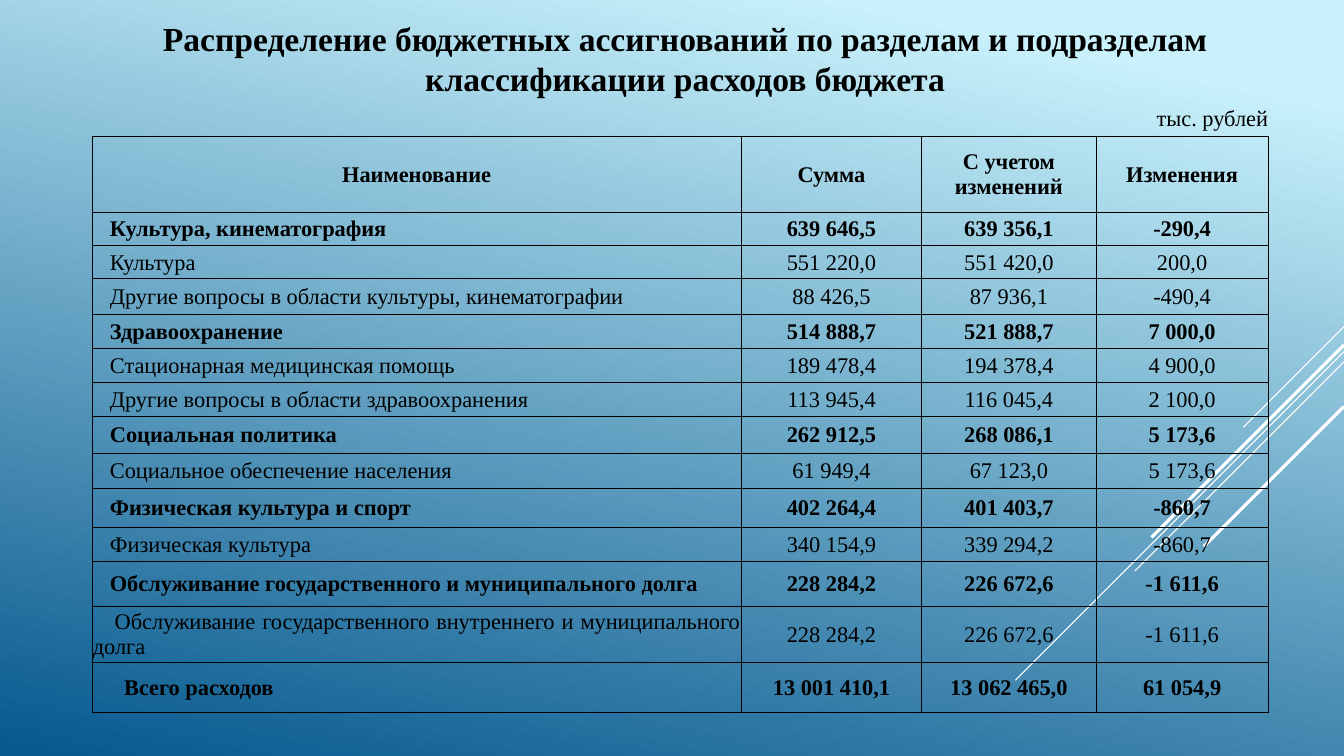
from dataclasses import dataclass

from lxml.etree import SubElement
from pptx import Presentation
from pptx.dml.color import RGBColor as Rgb
from pptx.enum.shapes import MSO_CONNECTOR as Link
from pptx.enum.text import MSO_ANCHOR as Anchor, MSO_AUTO_SIZE as Auto, PP_ALIGN as Align
from pptx.oxml.ns import qn
from pptx.util import Cm, Pt


@dataclass(frozen=True)
class Theme:
    font: str = "Times New Roman"
    ink: str = "000000"
    ray: str = "FFFFFF"
    light: str = "C8F1FB"
    deep: str = "06588E"
    head: int = 24
    body: int = 16
    rule: float = 0.5


THEME = Theme()
WIDE, HIGH = 33.87, 19.05

# Top and drop of each diagonal ray, then its weight
RAYS = [(8.23, 2.54, 0.75), (8.86, 8.28, 0.75), (9.12, 5.27, 0.75),
        (8.69, 4.85, 2.25), (10.24, 3.53, 2.25)]

COLS = [16.36, 4.55, 4.39, 4.34]
HEADS = ["Наименование", "Сумма", "С учетом изменений", "Изменения"]
HEAD_ROW = 1.91

# Height, bold, first-line indent, cells
ROWS = [
    (0.84, True, 0.43, ["Культура, кинематография", "639 646,5", "639 356,1", "-290,4"]),
    (0.83, False, 0.43, ["Культура", "551 220,0", "551 420,0", "200,0"]),
    (0.9, False, 0.43, ["Другие вопросы в области культуры, кинематографии",
                        "88 426,5", "87 936,1", "-490,4"]),
    (0.86, True, 0.43, ["Здравоохранение", "514 888,7", "521 888,7", "7 000,0"]),
    (0.85, False, 0.43, ["Стационарная медицинская помощь",
                         "189 478,4", "194 378,4", "4 900,0"]),
    (0.86, False, 0.43, ["Другие вопросы в области здравоохранения",
                         "113 945,4", "116 045,4", "2 100,0"]),
    (0.93, True, 0.43, ["Социальная политика", "262 912,5", "268 086,1", "5 173,6"]),
    (0.88, False, 0.43, ["Социальное обеспечение населения",
                         "61 949,4", "67 123,0", "5 173,6"]),
    (0.98, True, 0.43, ["Физическая культура и спорт",
                        "402 264,4", "401 403,7", "-860,7"]),
    (0.86, False, 0.43, ["Физическая культура", "340 154,9", "339 294,2", "-860,7"]),
    (1.14, True, 0.43, ["Обслуживание государственного и муниципального долга",
                        "228 284,2", "226 672,6", "-1 611,6"]),
    (1.4, False, 0.55, ["Обслуживание государственного внутреннего и муниципального долга",
                        "228 284,2", "226 672,6", "-1 611,6"]),
    (1.27, True, 0.79, ["Всего расходов", "13 001 410,1", "13 062 465,0", "61 054,9"]),
]


def write(frame, text, size, bold=False, align=Align.LEFT):
    frame.word_wrap = True
    frame.text = text
    para = frame.paragraphs[0]
    para.alignment = align
    font = para.font
    font.name, font.size, font.bold = THEME.font, Pt(size), bold
    font.color.rgb = Rgb.from_string(THEME.ink)
    return para


def paint(slide):
    fill = slide.background.fill
    fill.gradient()
    fill.gradient_angle = 258
    stops = zip(fill.gradient_stops, (0.1, 1), (THEME.light, THEME.deep))
    for stop, place, color in stops:
        stop.position = place
        stop.color.rgb = Rgb.from_string(color)


def add_rays(slide, right):
    for top, drop, weight in RAYS:
        ray = slide.shapes.add_connector(
            Link.STRAIGHT, Cm(right), Cm(top), Cm(right - drop), Cm(top + drop))
        ray.line.color.rgb = Rgb.from_string(THEME.ray)
        ray.line.width = Pt(weight)
        SubElement(ray._element.spPr, qn("a:effectLst"))


def add_head(slide, left, top, width, height):
    title = slide.shapes.title
    title.left, title.top = Cm(left), Cm(top)
    title.width, title.height = Cm(width), Cm(height)
    write(title.text_frame, "Распределение бюджетных ассигнований по разделам "
          "и подразделам классификации расходов бюджета",
          THEME.head, True, Align.CENTER)
    title.text_frame.auto_size = Auto.NONE
    title.text_frame.vertical_anchor = Anchor.MIDDLE


def add_unit(slide, left, top, width, height):
    box = slide.shapes.add_textbox(Cm(left), Cm(top), Cm(width), Cm(height))
    write(box.text_frame, "тыс. рублей", THEME.body)


def style(cell):
    cell.vertical_anchor = Anchor.MIDDLE
    cell.margin_left = cell.margin_right = cell.margin_top = Cm(0.02)
    cell.margin_bottom = 0
    props = cell._tc.get_or_add_tcPr()
    for side in ("a:lnL", "a:lnR", "a:lnT", "a:lnB"):
        line = SubElement(props, qn(side), w=str(Pt(THEME.rule)))
        fill = SubElement(line, qn("a:solidFill"))
        SubElement(fill, qn("a:srgbClr"), val=THEME.ink)
    cell.fill.background()


def add_grid(slide, left, top):
    rows = [(HEAD_ROW, True, 0, HEADS)] + ROWS
    high = sum(row[0] for row in rows)
    grid = slide.shapes.add_table(
        len(rows), len(COLS), Cm(left), Cm(top), Cm(sum(COLS)), Cm(high)).table
    grid.first_row = grid.horz_banding = False
    for col, width in zip(grid.columns, COLS):
        col.width = Cm(width)
    for r, (height, bold, indent, texts) in enumerate(rows):
        grid.rows[r].height = Cm(height)
        for c, text in enumerate(texts):
            cell = grid.cell(r, c)
            style(cell)
            label = r > 0 and c == 0
            para = write(cell.text_frame, text, THEME.body, bold,
                         Align.JUSTIFY if label else Align.CENTER)
            if label:
                para._p.get_or_add_pPr().set("indent", str(Cm(indent)))


def build(deck):
    slide = deck.slides.add_slide(deck.slide_layouts[5])
    # Backdrop
    paint(slide)
    add_rays(slide, WIDE)
    # Heading and unit
    add_head(slide, 3.78, 0.3, 26.97, 2.31)
    add_unit(slide, 28.9, 2.49, 4.19, 0.94)
    # Budget table
    add_grid(slide, 2.32, 3.44)


def main():
    deck = Presentation()
    deck.slide_width, deck.slide_height = Cm(WIDE), Cm(HIGH)
    build(deck)
    deck.save("out.pptx")


if __name__ == "__main__":
    main()
